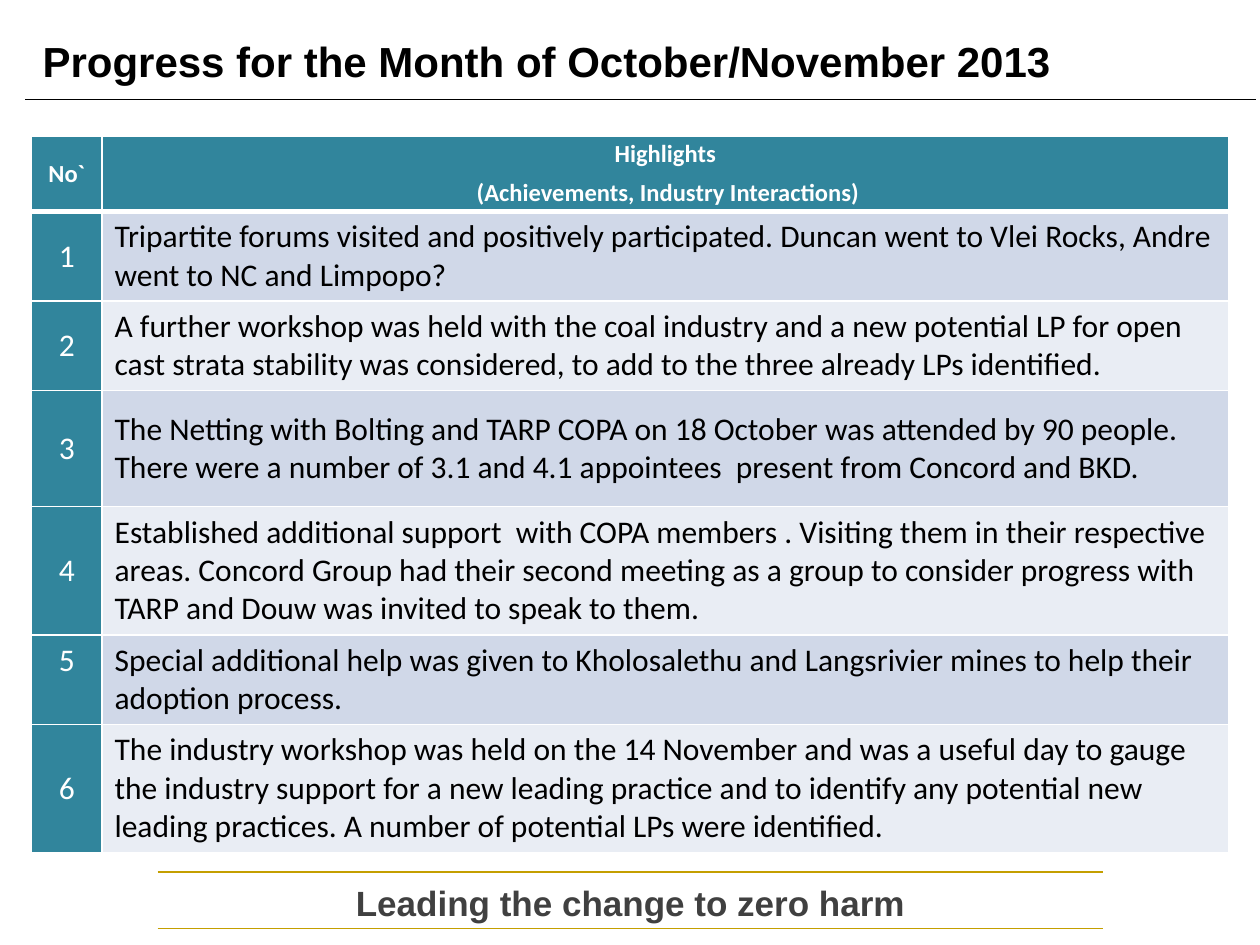
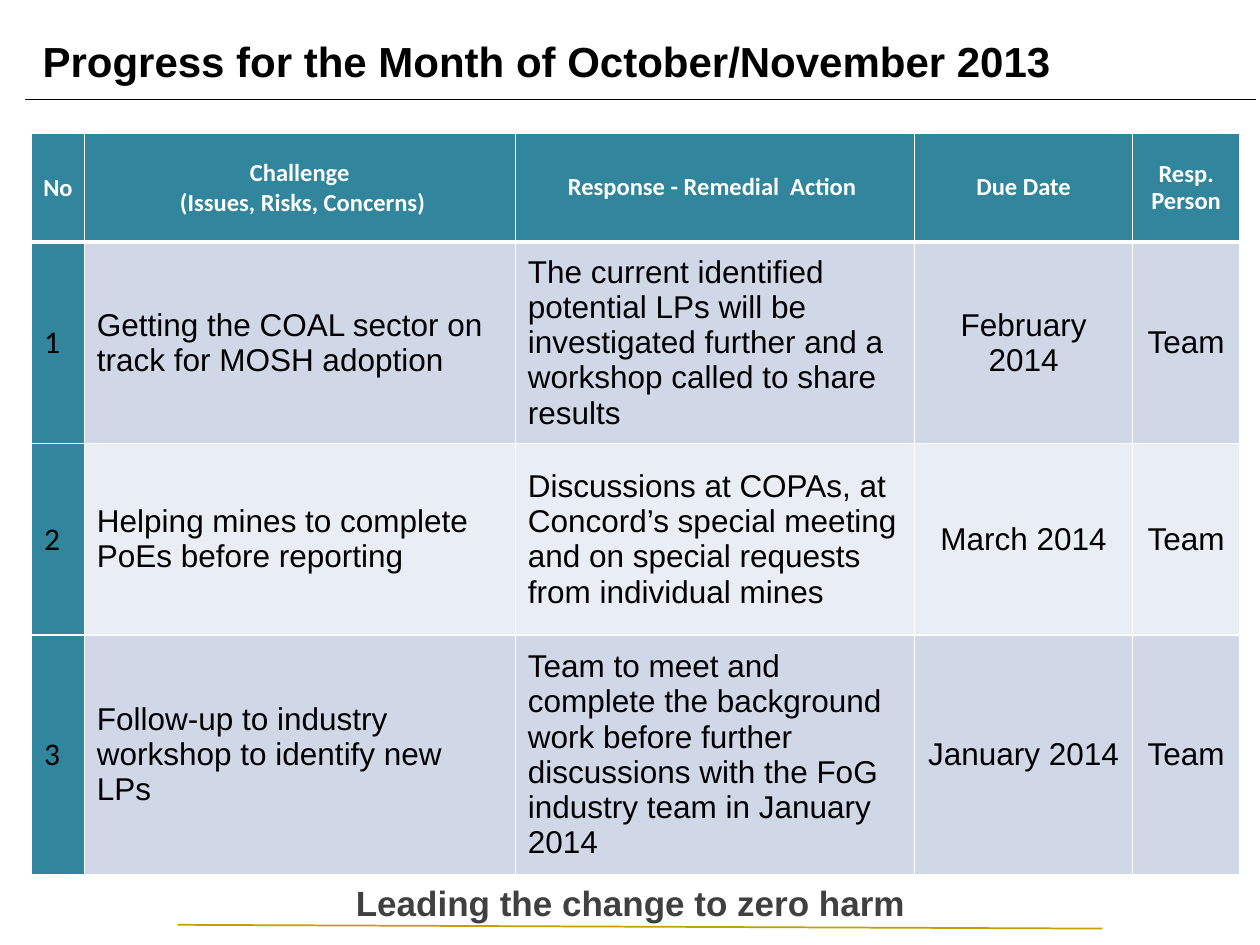
from lxml import etree
from pptx import Presentation
from pptx.dml.color import RGBColor
from pptx.enum.shapes import MSO_CONNECTOR
from pptx.enum.text import MSO_ANCHOR, PP_ALIGN
from pptx.oxml.ns import qn
from pptx.util import Inches, Pt

STRAIGHT = MSO_CONNECTOR.STRAIGHT
TOP, MIDDLE = MSO_ANCHOR.TOP, MSO_ANCHOR.MIDDLE
LEFT, CENTER = PP_ALIGN.LEFT, PP_ALIGN.CENTER

COLORS = {
    "black": "000000",
    "white": "FFFFFF",
    "gold": "C49F00",
    "grey": "404040",
    "teal": "31859C",
    "band_dark": "D0D8E8",
    "band_light": "E9EDF4",
}
TITLE = "Progress for the Month of October/November 2013"
SLOGAN = "Leading the change to zero harm"

HIGHLIGHTS = [
    "Tripartite forums visited and positively participated. Duncan went to Vlei Rocks, "
    "Andre went to NC and Limpopo?",
    "A further workshop was held with the coal industry and a new potential LP for open "
    "cast strata stability was considered, to add to the three already LPs identified.",
    "The Netting with Bolting and TARP COPA on 18 October was attended by 90 people. "
    "There were a number of 3.1 and 4.1 appointees  present from Concord and BKD.",
    "Established additional support  with COPA members . Visiting them in their respective "
    "areas. Concord Group had their second meeting as a group to consider progress with "
    "TARP and Douw was invited to speak to them.",
    "Special additional help was given to Kholosalethu and Langsrivier mines to help their "
    "adoption process.",
    "The industry workshop was held on the 14 November and was a useful day to gauge "
    "the industry support for a new leading practice and to identify any potential new "
    "leading practices. A number of potential LPs were identified.",
]
CHALLENGES = [
    ("Getting the COAL sector on track for MOSH adoption",
     "The current identified potential LPs will be investigated further and a workshop "
     "called to share results",
     "February 2014", "Team"),
    ("Helping mines to complete PoEs before reporting",
     "Discussions at COPAs, at Concord’s special meeting and on special requests from "
     "individual mines",
     "March 2014", "Team"),
    ("Follow-up to industry workshop to identify new LPs",
     "Team to meet and complete the background work before further discussions with the "
     "FoG industry team in January 2014",
     "January 2014", "Team"),
]


def rgb(name):
    return RGBColor.from_string(COLORS[name])


def write(paragraph, text, size, color, font="Calibri", bold=False, align=LEFT):
    paragraph.alignment = align
    run = paragraph.add_run()
    run.text = text
    run.font.name = font
    run.font.size = Pt(size)
    run.font.bold = bold
    run.font.color.rgb = rgb(color)


def add_line(slide, start, end, color, width):
    points = [Inches(value) for value in (*start, *end)]
    connector = slide.shapes.add_connector(STRAIGHT, *points)
    connector.line.color.rgb = rgb(color)
    connector.line.width = Pt(width)
    etree.SubElement(connector._element.spPr, qn("a:effectLst"))


def add_text(slide, box, text, size, color, align, anchor):
    shape = slide.shapes.add_textbox(*[Inches(value) for value in box])
    frame = shape.text_frame
    frame.word_wrap = True
    frame.vertical_anchor = anchor
    write(frame.paragraphs[0], text, size, color, "Arial", True, align)


def add_frame(presentation, footer_left, upper, lower_start):
    """Add a slide with the shared title, rule and footer."""
    slide = presentation.slides.add_slide(presentation.slide_layouts[6])
    add_line(slide, (footer_left, upper), (8.75, upper), "gold", 1)
    add_line(slide, (footer_left, lower_start), (8.75, 7.37), "gold", 1)
    add_line(slide, (0.2, 0.79), (9.97, 0.79), "black", 0.75)
    add_text(slide, (0.24, 0.17, 9.84, 0.63), TITLE, 24, "black", LEFT, MIDDLE)
    add_text(slide, (1.41, 6.95, 7.19, 0.39), SLOGAN, 20, "grey", CENTER, TOP)
    return slide


def add_table(slide, left, top, columns, rows):
    shape = slide.shapes.add_table(len(rows), len(columns), Inches(left), Inches(top),
                                   Inches(sum(columns)), Inches(sum(rows)))
    table = shape.table
    table.first_row = table.horz_banding = False
    for column, width in zip(table.columns, columns):
        column.width = Inches(width)
    for row, height in zip(table.rows, rows):
        row.height = Inches(height)
    return table


def style_cell(cell, fill, top=1, bottom=1, anchor=MIDDLE):
    """Draw white borders (widths in points), then fill and anchor the cell."""
    properties = cell._tc.get_or_add_tcPr()
    for side, width in (("L", 1), ("R", 1), ("T", top), ("B", bottom)):
        border = etree.SubElement(properties, qn(f"a:ln{side}"), w=str(Pt(width)))
        solid = etree.SubElement(border, qn("a:solidFill"))
        etree.SubElement(solid, qn("a:srgbClr"), val=COLORS["white"])
    cell.fill.solid()
    cell.fill.fore_color.rgb = rgb(fill)
    cell.vertical_anchor = anchor


def fill_header(cell, lines, anchor=MIDDLE, spacing=1.0, gap=0, margin=0.04):
    style_cell(cell, "teal", bottom=3, anchor=anchor)
    cell.margin_left = cell.margin_right = Inches(margin)
    cell.margin_top = cell.margin_bottom = Inches(0.04)
    frame = cell.text_frame
    for index, line in enumerate(lines):
        paragraph = frame.add_paragraph() if index else frame.paragraphs[0]
        paragraph.line_spacing = spacing
        paragraph.space_before = Pt(gap if index else 0)
        write(paragraph, line, 14, "white", bold=True, align=CENTER)


def fill_body(cell, row, text, font, align=LEFT):
    style_cell(cell, "band_dark" if row % 2 else "band_light", top=3 if row == 1 else 1)
    write(cell.text_frame.paragraphs[0], text, 18, "black", font, align=align)


def fill_number(cell, row, color, align, anchor=MIDDLE):
    style_cell(cell, "teal", top=3 if row == 1 else 1, anchor=anchor)
    write(cell.text_frame.paragraphs[0], str(row), 18, color, align=align)


def build_highlights(presentation):
    slide = add_frame(presentation, 1.25, 6.92, 7.37)
    table = add_table(slide, 0.25, 1.08, [0.56, 8.94],
                      [0.6, 0.71, 0.71, 0.92, 1.02, 0.71, 1.02])
    fill_header(table.cell(0, 0), ["No`"], margin=0.1)
    fill_header(table.cell(0, 1), ["Highlights", " (Achievements, Industry Interactions)"],
                TOP, spacing=0.9, gap=6.7)
    for row, text in enumerate(HIGHLIGHTS, 1):
        fill_number(table.cell(row, 0), row, "white", CENTER, TOP if row == 5 else MIDDLE)
        fill_body(table.cell(row, 1), row, text, "Calibri")


def build_challenges(presentation):
    slide = add_frame(presentation, 1.41, 6.93, 7.34)
    table = add_table(slide, 0.25, 1.06, [0.42, 3.42, 3.17, 1.73, 0.85],
                      [0.86, 1.5, 1.52, 1.79])
    fill_header(table.cell(0, 0), ["No"])
    fill_header(table.cell(0, 1), ["Challenge", " (Issues, Risks, Concerns)"])
    for column, text in enumerate(["Response - Remedial  Action ", "Due Date",
                                   "Resp. Person"], 2):
        fill_header(table.cell(0, column), [text], spacing=0.9)
    for row, texts in enumerate(CHALLENGES, 1):
        fill_number(table.cell(row, 0), row, "black", LEFT)
        for column, text in enumerate(texts, 1):
            fill_body(table.cell(row, column), row, text, "Arial",
                      CENTER if column > 2 else LEFT)


def main():
    presentation = Presentation()
    presentation.slide_width = Inches(10)
    presentation.slide_height = Inches(7.5)
    build_highlights(presentation)
    build_challenges(presentation)
    presentation.save("out.pptx")


if __name__ == "__main__":
    main()
